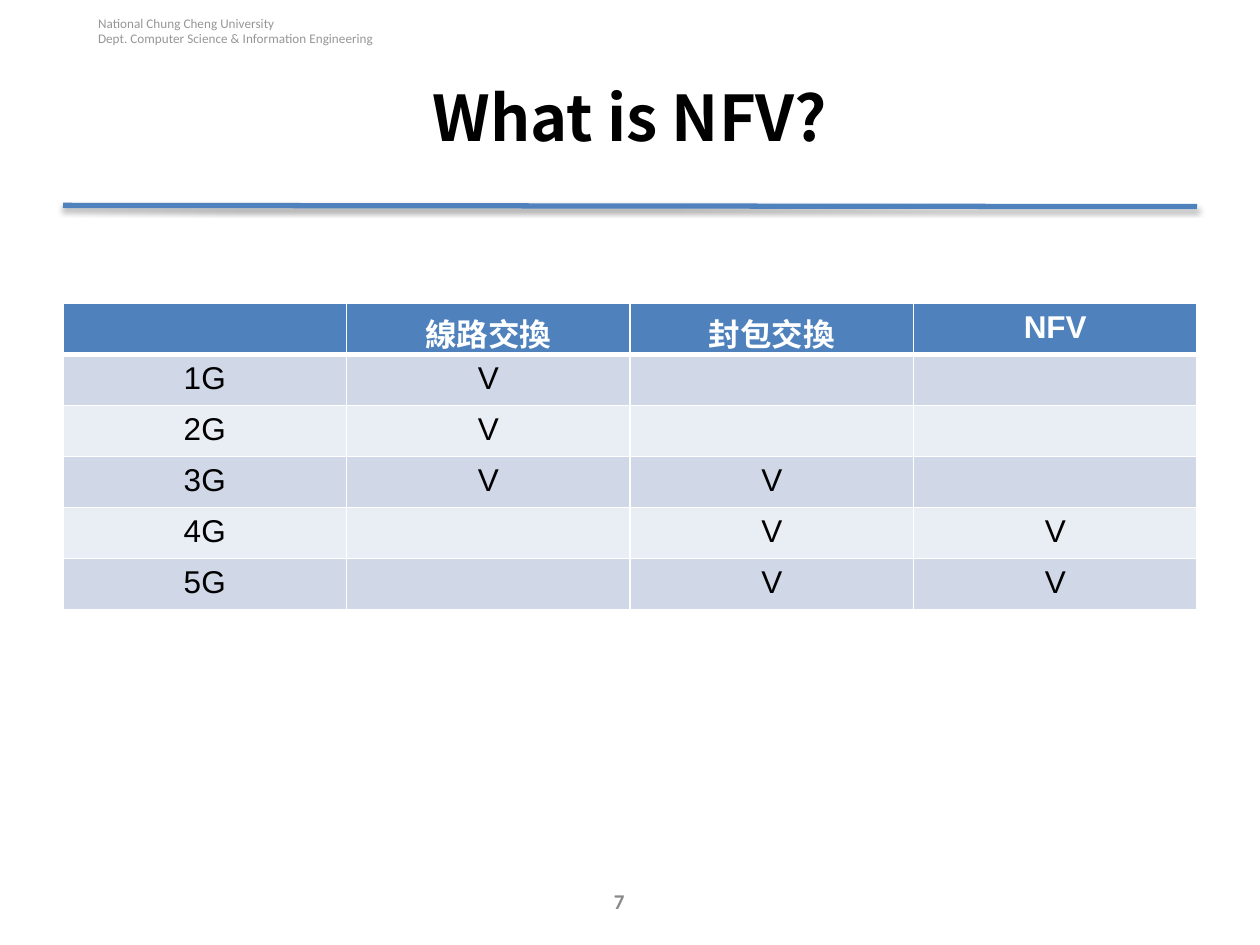
from dataclasses import dataclass

from lxml.etree import SubElement as Sub
from pptx import Presentation as Deck
from pptx.dml.color import RGBColor as Rgb
from pptx.enum.shapes import MSO_CONNECTOR as Link
from pptx.enum.text import MSO_ANCHOR as Anchor, PP_ALIGN as Align
from pptx.oxml import parse_xml
from pptx.oxml.ns import nsdecls, qn
from pptx.util import Inches, Pt


@dataclass(frozen=True)
class Theme:
    """Colours, fonts and type sizes of the deck."""
    blue: str = "4F81BD"
    bands: tuple = ("D0D8E8", "E9EDF4")
    white: str = "FFFFFF"
    black: str = "000000"
    pale: str = "969696"
    gray: str = "898989"
    body: str = "Arial"
    small: str = "Calibri"
    cjk: str = "Noto Sans CJK SC"
    title: float = 36
    cell: float = 18
    page: float = 12
    note: float = 7.5


THEME = Theme()
UNIT = Inches(0.25)
COLS, ROWS = 40, 30
GRID = [
    ["", "線路交換", "封包交換", "NFV"],
    ["1G", "V", "", ""],
    ["2G", "V", "", ""],
    ["3G", "V", "V", ""],
    ["4G", "", "V", "V"],
    ["5G", "", "V", "V"],
]


def scale(box):
    """Turn grid columns and rows into slide lengths."""
    return [round(n * UNIT) for n in box]


def style(frame, face, size, color, bold=False, align=Align.LEFT):
    """Format every run of a text frame."""
    for para in frame.paragraphs:
        para.alignment = align
        for run in para.runs:
            font = run.font
            font.name, font.size, font.bold = face, Pt(size), bold
            font.color.rgb = Rgb.from_string(color)
            Sub(run._r.get_or_add_rPr(), qn("a:ea"), typeface=THEME.cjk)


def label(slide, box, text, anchor, *look):
    """Place a wrapped text box."""
    frame = slide.shapes.add_textbox(*scale(box)).text_frame
    frame.word_wrap = True
    frame.vertical_anchor = anchor
    frame.text = text
    style(frame, *look)


def rule(slide, box):
    """Draw the shadowed line below the title."""
    x, y, w, h = scale(box)
    line = slide.shapes.add_connector(Link.STRAIGHT, x, y, x + w, y + h)
    line.line.color.rgb = Rgb.from_string(THEME.blue)
    line.line.width = Pt(3)
    fx = Sub(line._element.spPr, qn("a:effectLst"))
    cast = Sub(fx, qn("a:outerShdw"), blurRad=str(Pt(3.1)),
               dist=str(Pt(1.8)), dir="5400000", rotWithShape="0")
    tint = Sub(cast, qn("a:srgbClr"), val=THEME.black)
    Sub(tint, qn("a:alpha"), val="35000")


def edge(cell, widths):
    """Draw white borders at left, right, top and bottom."""
    props = cell._tc.get_or_add_tcPr()
    for i, (side, width) in enumerate(zip("LRTB", widths)):
        props.insert(i, parse_xml(
            f'<a:ln{side} {nsdecls("a")} w="{Pt(width)}"><a:solidFill>'
            f'<a:srgbClr val="{THEME.white}"/></a:solidFill></a:ln{side}>'))


def table(slide, box, data):
    """Place the banded table of switching types."""
    place = scale(box)
    grid = slide.shapes.add_table(len(data), len(data[0]), *place).table
    for r, row in enumerate(data):
        grid.rows[r].height = place[3] // len(data)
        head = r == 0
        fill = THEME.blue if head else THEME.bands[(r - 1) % 2]
        ink = THEME.white if head else THEME.black
        widths = (1, 1, 3 if r == 1 else 1, 3 if head else 1)
        for c, text in enumerate(row):
            cell = grid.cell(r, c)
            cell.text_frame.text = text
            style(cell.text_frame, THEME.body, THEME.cell, ink, head,
                  Align.CENTER)
            cell.fill.solid()
            cell.fill.fore_color.rgb = Rgb.from_string(fill)
            edge(cell, widths)


def main():
    """Build and save the slide."""
    deck = Deck()
    deck.slide_width, deck.slide_height = COLS * UNIT, ROWS * UNIT
    slide = deck.slides.add_slide(deck.slide_layouts[6])
    label(slide, (2.72, 0.28, 13.6, 1.4),
          "National Chung Cheng University\n"
          "Dept. Computer Science & Information Engineering",
          Anchor.TOP, THEME.small, THEME.note, THEME.pale)
    rule(slide, (2, 6.52, 36, 0.04))
    label(slide, (2, 1.2, 36, 5), "What is NFV?", Anchor.MIDDLE,
          THEME.cjk, THEME.title, THEME.black, True, Align.CENTER)
    table(slide, (2, 9.64, 36, 9.72), GRID)
    label(slide, (15, 27.8, 9.32, 1.6), "7", Anchor.MIDDLE,
          THEME.small, THEME.page, THEME.gray, True, Align.CENTER)
    deck.save("out.pptx")


if __name__ == "__main__":
    main()
